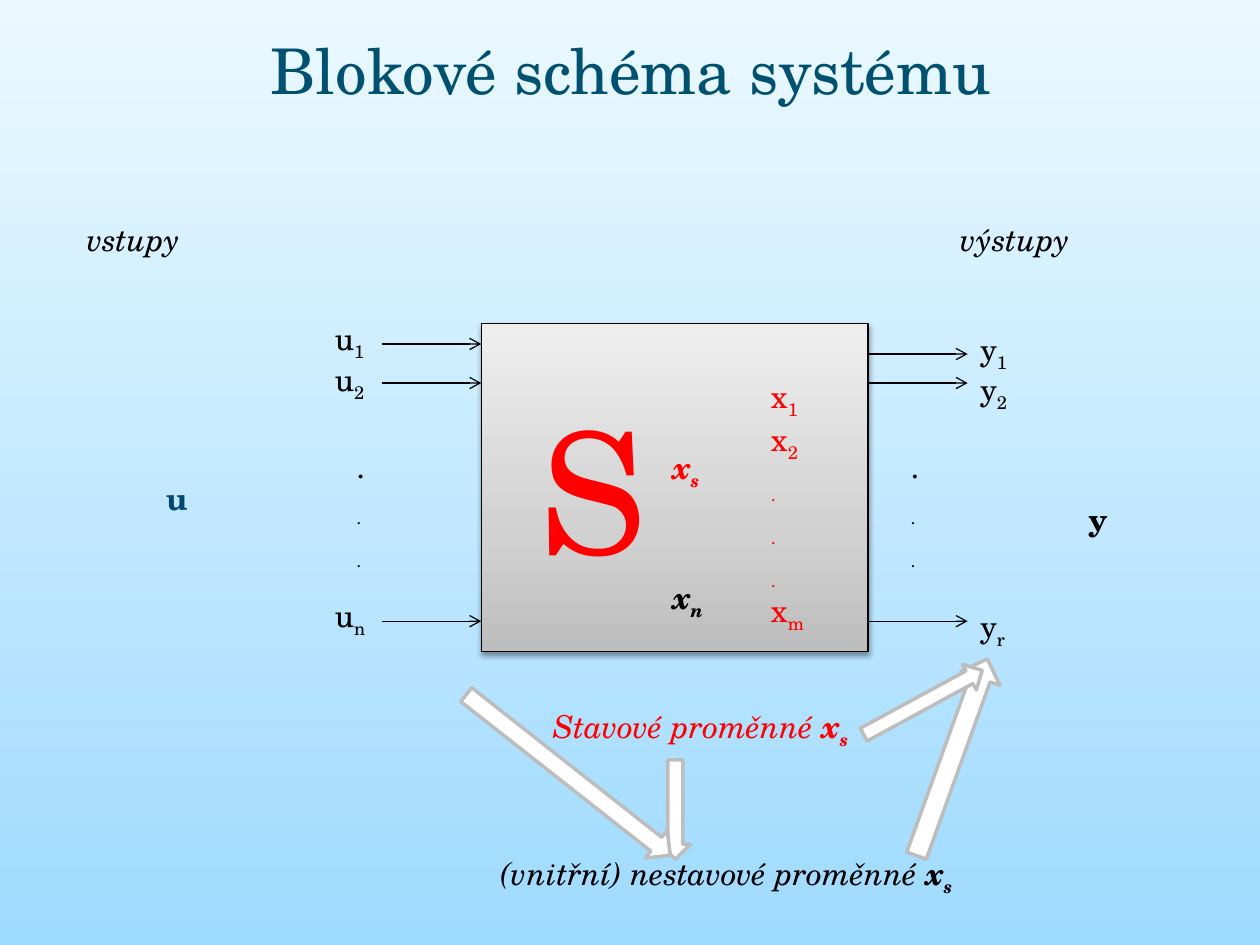
from copy import deepcopy
from pptx import Presentation
from pptx.dml.color import RGBColor
from pptx.enum.shapes import MSO_CONNECTOR as Conn, MSO_SHAPE as Shape
from pptx.enum.text import MSO_ANCHOR as Anchor, MSO_AUTO_SIZE as Auto, PP_ALIGN as Align
from pptx.oxml import parse_xml
from pptx.oxml.ns import nsdecls, qn
from pptx.util import Inches, Pt

BLACK, RED, WHITE, GRAY = "000000", "FF0000", "FFFFFF", "BDBDBD"


def color(code):
    return RGBColor.from_string(code)


class Board:
    font = "TeX Gyre Schola"
    size = 18

    def __init__(self, deck):
        self.slide = deck.slides.add_slide(deck.slide_layouts[5])
        self.shapes = self.slide.shapes

    def blend(self, fill, root, stops, angle):
        fill.gradient()
        fill.gradient_angle = angle
        group = root.find(".//" + qn("a:gsLst"))
        while len(group) < len(stops):
            group.append(deepcopy(group[0]))
        for stop, (place, code) in zip(fill.gradient_stops, stops):
            stop.position = place
            stop.color.rgb = color(code)

    def ground(self, stops, angle):
        fill = self.slide.background.fill
        self.blend(fill, self.slide.element, stops, angle)

    def place(self, shape, spot):
        shape.left, shape.top, shape.width, shape.height = map(Inches, spot)

    def fill_para(self, para, runs, tone, size=None):
        for text, marks in runs:
            run = para.add_run()
            run.text = text
            font = run.font
            font.name = self.font
            font.size = Pt(size or self.size)
            font.color.rgb = color(tone)
            font.bold = "b" in marks
            font.italic = "i" in marks
            if "s" in marks:
                font._element.set("baseline", "-25000")

    def title(self, text, spot):
        shape = self.shapes.title
        self.place(shape, spot)
        frame = shape.text_frame
        frame.vertical_anchor = Anchor.MIDDLE
        para = frame.paragraphs[0]
        para.alignment = Align.CENTER
        self.fill_para(para, [(text, "")], "005070", 36)

    def text(self, spot, *paras, tone=BLACK, wrap=True):
        frame = self.shapes.add_textbox(*map(Inches, spot)).text_frame
        frame.word_wrap = wrap
        frame.auto_size = Auto.SHAPE_TO_FIT_TEXT
        for i, runs in enumerate(paras):
            para = frame.add_paragraph() if i else frame.paragraphs[0]
            self.fill_para(para, runs, tone)

    def block(self, spot, text, stops):
        box = self.shapes.add_shape(Shape.RECTANGLE, *map(Inches, spot))
        self.blend(box.fill, box.element, stops, 90)
        box.line.color.rgb = color(BLACK)
        box.line.width = Pt(0.75)
        box.element.spPr.append(parse_xml(
            f'<a:effectLst {nsdecls("a")}><a:outerShdw blurRad="{Pt(3.1)}" dist="{Pt(1.6)}" '
            'dir="5400000" rotWithShape="0"><a:srgbClr val="000000"><a:alpha val="38000"/>'
            '</a:srgbClr></a:outerShdw></a:effectLst>'))
        frame = box.text_frame
        frame.vertical_anchor = Anchor.MIDDLE
        para = frame.paragraphs[0]
        para.alignment = Align.LEFT
        self.fill_para(para, [(text, "")], RED, 96)

    def wire(self, left, right, y):
        line = self.shapes.add_connector(Conn.STRAIGHT, *map(Inches, (left, y, right, y)))
        line.line.color.rgb = color(BLACK)
        line.line.width = Pt(0.75)
        pen = line.element.spPr.find(qn("a:ln"))
        pen.append(parse_xml(f'<a:tailEnd {nsdecls("a")} type="arrow"/>'))
        line.element.spPr.append(parse_xml(f'<a:effectLst {nsdecls("a")}/>'))

    def arrow(self, spot, turn):
        shape = self.shapes.add_shape(Shape.DOWN_ARROW, *map(Inches, spot))
        shape.rotation = turn
        shape.shadow.inherit = False
        shape.fill.solid()
        shape.fill.fore_color.rgb = color(WHITE)
        shape.line.color.rgb = color(GRAY)
        shape.line.width = Pt(2)


def main():
    deck = Presentation()
    deck.slide_width, deck.slide_height = Inches(10), Inches(7.5)
    board = Board(deck)
    board.ground([(0, "EBF9FF"), (1, "9FDAFF")], 270)
    board.title("Blokové schéma systému", (0.51, 0, 8.99, 1.1))

    left, width = 3.82, 3.07
    right, reach = left + width, 0.79
    board.block((left, 2.57, width, 2.6), " S",
                [(0, GRAY), (0.35, "D1D1D1"), (1, "EEEEEE")])
    for sub, top, tone in (("s", 3.51, RED), ("n", 4.54, BLACK)):
        board.text((5.24, top, 0.71, 0.4), [("x", "bi"), (sub, "bis")], tone=tone)
    dot = [(".", "s")]
    board.text((6.02, 2.94, 0.63, 1.62),
               [("x", ""), ("1 ", "s"), ("x", ""), ("2", "s")],
               dot, dot, dot, [("x", ""), ("m", "s")], tone=RED)

    sides = (
        ("u", 2.56, left - reach, (2.73, 3.04, 4.93), (("1", 2.48), ("2", 2.81), ("n", 4.68))),
        ("y", 7.68, right, (2.81, 3.04, 4.93), (("1", 2.57), ("2", 2.89), ("r", 4.77))),
    )
    for name, edge, start, rows, marks in sides:
        for y in rows:
            board.wire(start, start + reach, y)
        for sub, top in marks:
            board.text((edge, top, 0.47, 0.4), [(name, ""), (sub, "s")])
    for x in (2.73, 7.13):
        board.text((x, 3.5, 0.47, 0.81), [(".", "")], dot, dot)
    board.text((1.22, 3.75, 0.39, 0.4), [("u", "b")], tone="004873")
    board.text((8.54, 3.92, 0.39, 0.4), [("y", "b")])

    state = [("x", "bi"), ("s", "bis")]
    for spot, text, tail, tone in (
        ((0.59, 1.7, 0.97, 0.4), "vstupy", [], BLACK),
        ((7.52, 1.7, 1.11, 0.4), "výstupy", [], BLACK),
        ((4.29, 5.56, 2.61, 0.4), "Stavové proměnné ", state, RED),
        ((3.87, 6.73, 3.89, 0.4), "(vnitřní) nestavové proměnné ", state, BLACK),
    ):
        board.text(spot, [(text, "i")] + tail, tone=tone, wrap=False)

    for spot, turn in (
        ((5.24, 6.03, 0.24, 0.79), 0),
        ((4.37, 5.12, 0.28, 2.06), 308.2),
        ((7.39, 5.18, 0.33, 1.66), 199.8),
        ((7.21, 5.04, 0.23, 1.07), 241.5),
    ):
        board.arrow(spot, turn)
    deck.save("out.pptx")


if __name__ == "__main__":
    main()
